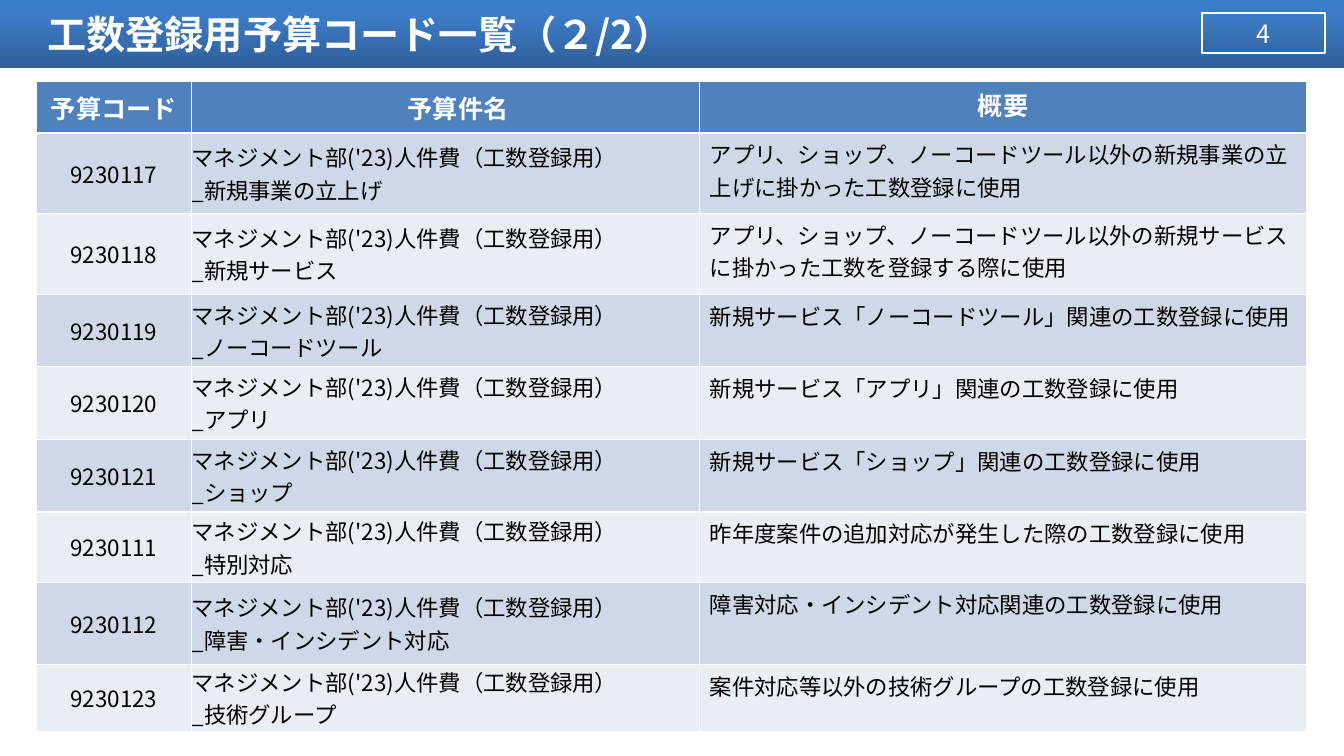
from dataclasses import dataclass

from copy import deepcopy
from lxml import etree
from pptx import Presentation
from pptx.dml.color import RGBColor
from pptx.enum.shapes import MSO_SHAPE
from pptx.enum.text import MSO_ANCHOR, MSO_AUTO_SIZE, PP_ALIGN
from pptx.oxml.ns import qn
from pptx.util import Inches, Pt

RECT = MSO_SHAPE.RECTANGLE
TOP, MIDDLE = MSO_ANCHOR.TOP, MSO_ANCHOR.MIDDLE
LEFT, CENTER = PP_ALIGN.LEFT, PP_ALIGN.CENTER

FONT = "Noto Sans CJK JP"
WHITE = RGBColor(0xFF, 0xFF, 0xFF)
BLACK = RGBColor(0x00, 0x00, 0x00)
HEADER_BLUE = RGBColor(0x4F, 0x81, 0xBD)
BANDS = (RGBColor(0xD0, 0xD8, 0xE8), RGBColor(0xE9, 0xED, 0xF4))
TITLE_STOPS = (
    (0.0, RGBColor(0x2F, 0x5F, 0x99)),
    (0.8, RGBColor(0x3D, 0x7C, 0xC7)),
    (1.0, RGBColor(0x3A, 0x7C, 0xCB)),
)

BUDGET_PREFIX = "マネジメント部('23)人件費（工数登録用）"
HEADERS = ("予算コード", "　予算件名", "概要")
COLUMN_WIDTHS = (1.54, 5.04, 6.02)
HEADER_HEIGHT = 0.51


@dataclass
class Budget:
    code: str
    name: str
    summary: str
    height: float


BUDGETS = (
    Budget("9230117", "新規事業の立上げ",
           "アプリ、ショップ、ノーコードツール以外の新規事業の立上げに掛かった工数登録に使用", 0.8),
    Budget("9230118", "新規サービス",
           "アプリ、ショップ、ノーコードツール以外の新規サービスに掛かった工数を登録する際に使用", 0.8),
    Budget("9230119", "ノーコードツール",
           "新規サービス「ノーコードツール」関連の工数登録に使用", 0.72),
    Budget("9230120", "アプリ", "新規サービス「アプリ」関連の工数登録に使用", 0.72),
    Budget("9230121", "ショップ", "新規サービス「ショップ」関連の工数登録に使用", 0.72),
    Budget("9230111", "特別対応",
           "昨年度案件の追加対応が発生した際の工数登録に使用", 0.7),
    Budget("9230112", "障害・インシデント対応",
           "障害対応・インシデント対応関連の工数登録に使用", 0.81),
    Budget("9230123", "技術グループ",
           "案件対応等以外の技術グループの工数登録に使用", 0.67),
)


def write(tf, lines: tuple[str, ...], size: int, color: RGBColor,
          bold: bool = False, align=LEFT) -> None:
    """Fill a text frame with one paragraph per line."""
    for i, line in enumerate(lines):
        p = tf.add_paragraph() if i else tf.paragraphs[0]
        p.text = line
        p.alignment = align
        p.font.size = Pt(size)
        p.font.bold = bold
        p.font.color.rgb = color
        p.font.name = FONT
        # East Asian glyphs take their own typeface element
        props = p._p.pPr.find(qn("a:defRPr"))
        etree.SubElement(props, qn("a:ea"), typeface=FONT)


def add_rect(slide, left: float, top: float, width: float, height: float):
    sp = slide.shapes.add_shape(
        RECT, Inches(left), Inches(top), Inches(width), Inches(height))
    sp.shadow.inherit = False
    return sp


def add_title_band(slide) -> None:
    sp = add_rect(slide, 0, 0, 13.33, 0.68)
    sp.line.fill.background()
    sp.fill.gradient()
    sp.fill.gradient_angle = 90
    stops = sp._element.spPr.find(".//" + qn("a:gsLst"))
    stops.append(deepcopy(stops[-1]))
    for stop, (position, color) in zip(sp.fill.gradient_stops, TITLE_STOPS):
        stop.position = position
        stop.color.rgb = color
    # Send the band behind the title
    slide.shapes._spTree.insert(2, sp._element)


def format_title(slide, text: str) -> None:
    sp = slide.shapes.title
    sp.left, sp.top = Inches(0.37), Inches(0)
    sp.width, sp.height = Inches(11.55), Inches(0.68)
    tf = sp.text_frame
    tf.auto_size = MSO_AUTO_SIZE.NONE
    tf.vertical_anchor = MIDDLE
    write(tf, (text,), 28, WHITE, bold=True)


def add_page_number(slide, number: str) -> None:
    sp = add_rect(slide, 11.92, 0.13, 1.22, 0.4)
    sp.fill.background()
    sp.line.color.rgb = WHITE
    sp.line.width = Pt(1.5)
    sp.text_frame.vertical_anchor = MIDDLE
    write(sp.text_frame, (number,), 18, WHITE, align=CENTER)


def fill_cell(table, row: int, col: int, lines: tuple[str, ...]) -> None:
    cell = table.cell(row, col)
    header = row == 0
    cell.fill.solid()
    cell.fill.fore_color.rgb = HEADER_BLUE if header else BANDS[(row - 1) % 2]
    # The summary column keeps its default margins
    if col < 2:
        cell.margin_left = cell.margin_right = 0
        cell.margin_top = cell.margin_bottom = 0
    cell.vertical_anchor = MIDDLE if col < 2 else TOP
    write(cell.text_frame, lines, 18 if header else 16,
          WHITE if header else BLACK, bold=header,
          align=CENTER if header or col == 0 else LEFT)


def add_budget_table(slide) -> None:
    heights = (HEADER_HEIGHT, *(b.height for b in BUDGETS))
    table = slide.shapes.add_table(
        len(heights), len(COLUMN_WIDTHS), Inches(0.36), Inches(0.81),
        Inches(sum(COLUMN_WIDTHS)), Inches(sum(heights))).table
    for column, width in zip(table.columns, COLUMN_WIDTHS):
        column.width = Inches(width)
    for row, height in zip(table.rows, heights):
        row.height = Inches(height)

    for col, header in enumerate(HEADERS):
        fill_cell(table, 0, col, (header,))
    for row, b in enumerate(BUDGETS, start=1):
        fill_cell(table, row, 0, (b.code,))
        fill_cell(table, row, 1, (BUDGET_PREFIX, f"_{b.name}"))
        fill_cell(table, row, 2, (b.summary,))


def main() -> None:
    prs = Presentation()
    prs.slide_width, prs.slide_height = Inches(13.33), Inches(7.5)
    slide = prs.slides.add_slide(prs.slide_layouts[5])

    # Title bar
    add_title_band(slide)
    format_title(slide, "工数登録用予算コード一覧（２/2）")
    add_page_number(slide, "4")

    # Budget codes
    add_budget_table(slide)

    prs.save("out.pptx")


if __name__ == "__main__":
    main()
